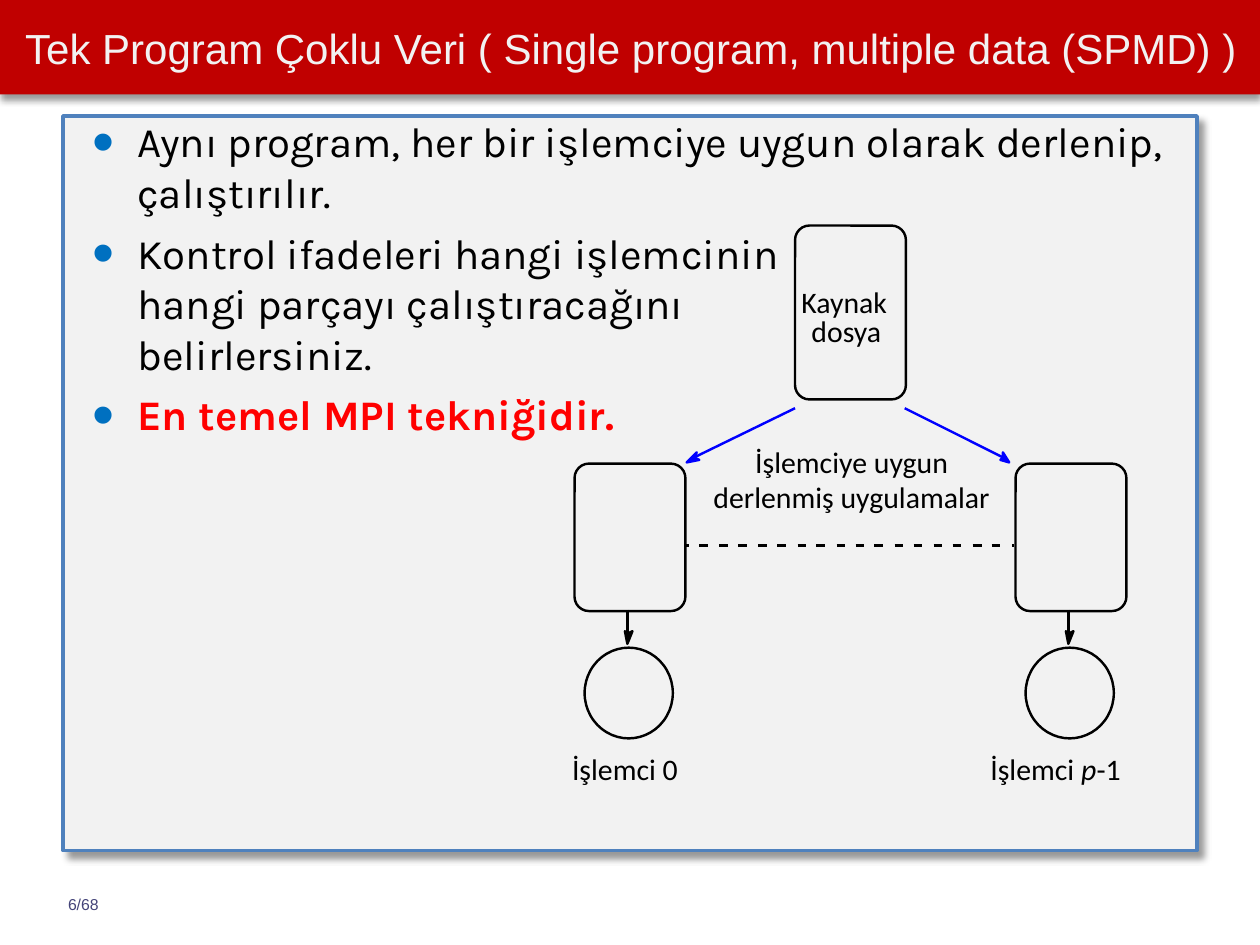
from dataclasses import dataclass

from lxml import etree
from pptx import Presentation
from pptx.dml.color import RGBColor
from pptx.enum.shapes import MSO_CONNECTOR, MSO_SHAPE
from pptx.enum.text import MSO_ANCHOR, MSO_AUTO_SIZE, PP_ALIGN
from pptx.oxml.ns import qn
from pptx.util import Emu, Pt

PX = 9144  # 100 px to the inch
ROUNDED, ELLIPSE = MSO_SHAPE.ROUNDED_RECTANGLE, MSO_SHAPE.OVAL
STRAIGHT = MSO_CONNECTOR.STRAIGHT
LEFT, CENTER = PP_ALIGN.LEFT, PP_ALIGN.CENTER
TOP, MIDDLE = MSO_ANCHOR.TOP, MSO_ANCHOR.MIDDLE
FIXED, GROW = MSO_AUTO_SIZE.NONE, MSO_AUTO_SIZE.SHAPE_TO_FIT_TEXT


@dataclass(frozen=True)
class Theme:
    banner: str = "C00000"
    panel: str = "F2F2F2"
    panel_line: str = "4F81BD"
    bullet: str = "0070C0"
    ink: str = "000000"
    accent: str = "FF0000"
    flow: str = "0000FF"
    page: str = "444479"
    title_font: str = "Arial"
    body_font: str = "Karla"
    label_font: str = "Calibri"
    main_size: int = 24
    label_size: int = 17
    page_size: int = 9
    line_width: float = 1.38


@dataclass(frozen=True)
class Box:
    x: int
    y: int
    w: int
    h: int

    def emu(self) -> list[Emu]:
        return [Emu(v * PX) for v in (self.x, self.y, self.w, self.h)]


@dataclass(frozen=True)
class Arrow:
    """A shaft from start to the notch, which is the first point of the head."""
    start: tuple[int, int]
    head: tuple[tuple[int, int], ...]
    color: str


@dataclass(frozen=True)
class Label:
    box: Box
    text: str
    align: PP_ALIGN = LEFT


THEME = Theme()
PROCESSOR_STEP = 350
DASH_LEFT, DASH_RIGHT, DASH_Y = 543, 805, 433
DASH_FIRST, DASH_PITCH, DASH_LENGTH, DASH_COUNT = 540, 15.45, 7, 18
BULLETS = (
    ("Aynı program, her bir işlemciye uygun olarak derlenip, çalıştırılır.", THEME.ink, False),
    ("Kontrol ifadeleri hangi işlemcinin\vhangi parçayı çalıştıracağını \vbelirlersiniz.",
     THEME.ink, False),
    ("En temel MPI tekniğidir.", THEME.accent, True),
)
FLOWS = (
    Arrow((631, 324), ((551, 363), (555, 365), (545, 367), (553, 359)), THEME.flow),
    Arrow((718, 324), ((796, 363), (796, 359), (801, 367), (794, 365)), THEME.flow),
)
LABELS = (
    Label(Box(556, 352, 240, 57), "İşlemciye uygun\vderlenmiş uygulamalar", CENTER),
    Label(Box(636, 225, 80, 29), "Kaynak"),
    Label(Box(644, 248, 64, 29), "dosya"),
    Label(Box(454, 596, 94, 29), "İşlemci 0"),
)


def assign(obj, values: dict) -> None:
    for name, value in values.items():
        setattr(obj, name, value)


def add_xml(parent, tag: str, **attrs):
    return etree.SubElement(parent, qn(tag), {k: str(v) for k, v in attrs.items()})


def format_frame(tf, **values) -> None:
    margins = dict.fromkeys(("margin_left", "margin_top", "margin_right", "margin_bottom"), 0)
    assign(tf, {**margins, "vertical_anchor": TOP, **values})


def format_run(r, font: str, size: int, color: str, **values) -> None:
    assign(r.font, {"name": font, "size": Pt(size), **values})
    r.font.color.rgb = RGBColor.from_string(color)


def format_line(sp, color: str, width: float = THEME.line_width) -> None:
    sp.line.color.rgb = RGBColor.from_string(color)
    sp.line.width = Pt(width)


def fill_solid(sp, color: str) -> None:
    sp.fill.solid()
    sp.fill.fore_color.rgb = RGBColor.from_string(color)


def set_indent(p, left: int, first: int = 0) -> None:
    pPr = p._p.get_or_add_pPr()
    pPr.set("marL", str(left * PX))
    pPr.set("indent", str(first * PX))


def place_panel(sp, box: Box, fill: str) -> None:
    assign(sp, dict(zip(("left", "top", "width", "height"), box.emu())))
    fill_solid(sp, fill)


def add_shadow(sp, distance: int, angle: int) -> None:
    effects = add_xml(sp._element.spPr, "a:effectLst")
    shadow = add_xml(effects, "a:outerShdw", blurRad=Pt(4), dist=Pt(distance),
                     dir=angle * 60000, algn="tl", rotWithShape=0)
    color = add_xml(shadow, "a:srgbClr", val=THEME.ink)
    add_xml(color, "a:alpha", val=40000)


def draw_title(slide) -> None:
    sp = slide.shapes.title
    place_panel(sp, Box(0, 0, 1000, 75), THEME.banner)
    add_shadow(sp, 3, 90)
    tf = sp.text_frame
    format_frame(tf, vertical_anchor=MIDDLE, auto_size=FIXED)
    p = tf.paragraphs[0]
    p.text = "Tek Program Çoklu Veri ( Single program, multiple data (SPMD) )"
    p.alignment = LEFT
    set_indent(p, 20)
    format_run(p.runs[0], THEME.title_font, THEME.main_size, THEME.panel)


def draw_body(slide) -> None:
    sp = slide.placeholders[1]
    place_panel(sp, Box(50, 92, 900, 583), THEME.panel)
    format_line(sp, THEME.panel_line, 2)
    add_shadow(sp, 5, 45)
    tf = sp.text_frame
    format_frame(tf, auto_size=FIXED)
    for i, (text, color, bold) in enumerate(BULLETS):
        p = tf.add_paragraph() if i else tf.paragraphs[0]
        assign(p, {"text": text, "alignment": LEFT, "space_before": Pt(6)})
        set_indent(p, 59, -36)
        pPr = p._p.get_or_add_pPr()
        add_xml(add_xml(pPr, "a:buClr"), "a:srgbClr", val=THEME.bullet)
        add_xml(pPr, "a:buSzPct", val=150000)
        add_xml(pPr, "a:buChar", char="•")
        for r in p.runs:
            format_run(r, THEME.body_font, THEME.main_size, color, bold=bold)


def draw_outline(slide, kind: MSO_SHAPE, box: Box) -> None:
    sp = slide.shapes.add_shape(kind, *box.emu())
    sp.shadow.inherit = False
    sp.fill.background()
    format_line(sp, THEME.ink)
    if kind == ROUNDED:
        sp.adjustments[0] = 0.13


def draw_line(slide, start: tuple[int, int], end: tuple[int, int], color: str) -> None:
    sp = slide.shapes.add_connector(STRAIGHT, *(Emu(v * PX) for v in (*start, *end)))
    format_line(sp, color)
    add_xml(sp._element.spPr, "a:effectLst")


def draw_arrow(slide, arrow: Arrow) -> None:
    notch, *rest = arrow.head
    draw_line(slide, arrow.start, notch, arrow.color)
    builder = slide.shapes.build_freeform(*notch, scale=PX)
    builder.add_line_segments(rest, close=True)
    sp = builder.convert_to_shape()
    sp.shadow.inherit = False
    fill_solid(sp, arrow.color)
    format_line(sp, arrow.color)


def draw_dashes(slide) -> None:
    """Evenly spaced dashes, the outer two cut off at the processor boxes."""
    for i in range(DASH_COUNT):
        x = round(DASH_FIRST + i * DASH_PITCH)
        start, end = max(x, DASH_LEFT), min(x + DASH_LENGTH, DASH_RIGHT)
        draw_line(slide, (start, DASH_Y), (end, DASH_Y), THEME.ink)


def draw_label(slide, label: Label):
    tf = slide.shapes.add_textbox(*label.box.emu()).text_frame
    format_frame(tf, word_wrap=False, auto_size=GROW)
    p = tf.paragraphs[0]
    assign(p, {"text": label.text, "alignment": label.align})
    for r in p.runs:
        format_run(r, THEME.label_font, THEME.label_size, THEME.ink)
    return p


def draw_processor(slide, dx: int) -> None:
    draw_outline(slide, ROUNDED, Box(456 + dx, 368, 88, 117))
    draw_outline(slide, ELLIPSE, Box(464 + dx, 514, 70, 72))
    x = 498 + dx
    head = ((x, 503), (x + 4, 501), (x, 511), (x - 2, 501))
    draw_arrow(slide, Arrow((x, 484), head, THEME.ink))


def draw_page_number(slide) -> None:
    tf = slide.shapes.add_textbox(*Box(50, 710, 67, 15).emu()).text_frame
    format_frame(tf, word_wrap=True, auto_size=GROW)
    p = tf.paragraphs[0]
    p.text = "6/68"
    set_indent(p, 4)
    format_run(p.runs[0], THEME.title_font, THEME.page_size, THEME.page)


def main() -> None:
    prs = Presentation()
    prs.slide_width, prs.slide_height = Emu(1000 * PX), Emu(750 * PX)
    slide = prs.slides.add_slide(prs.slide_layouts[1])
    draw_title(slide)
    draw_body(slide)
    draw_outline(slide, ROUNDED, Box(631, 179, 88, 138))
    for i in range(2):
        draw_processor(slide, i * PROCESSOR_STEP)
    for arrow in FLOWS:
        draw_arrow(slide, arrow)
    draw_dashes(slide)
    for label in LABELS:
        draw_label(slide, label)
    p = draw_label(slide, Label(Box(786, 596, 122, 29), "İşlemci "))
    for text, italic in (("p", True), ("-1", False)):
        r = p.add_run()
        r.text = text
        format_run(r, THEME.label_font, THEME.label_size, THEME.ink, italic=italic)
    draw_page_number(slide)
    prs.save("out.pptx")


if __name__ == "__main__":
    main()
